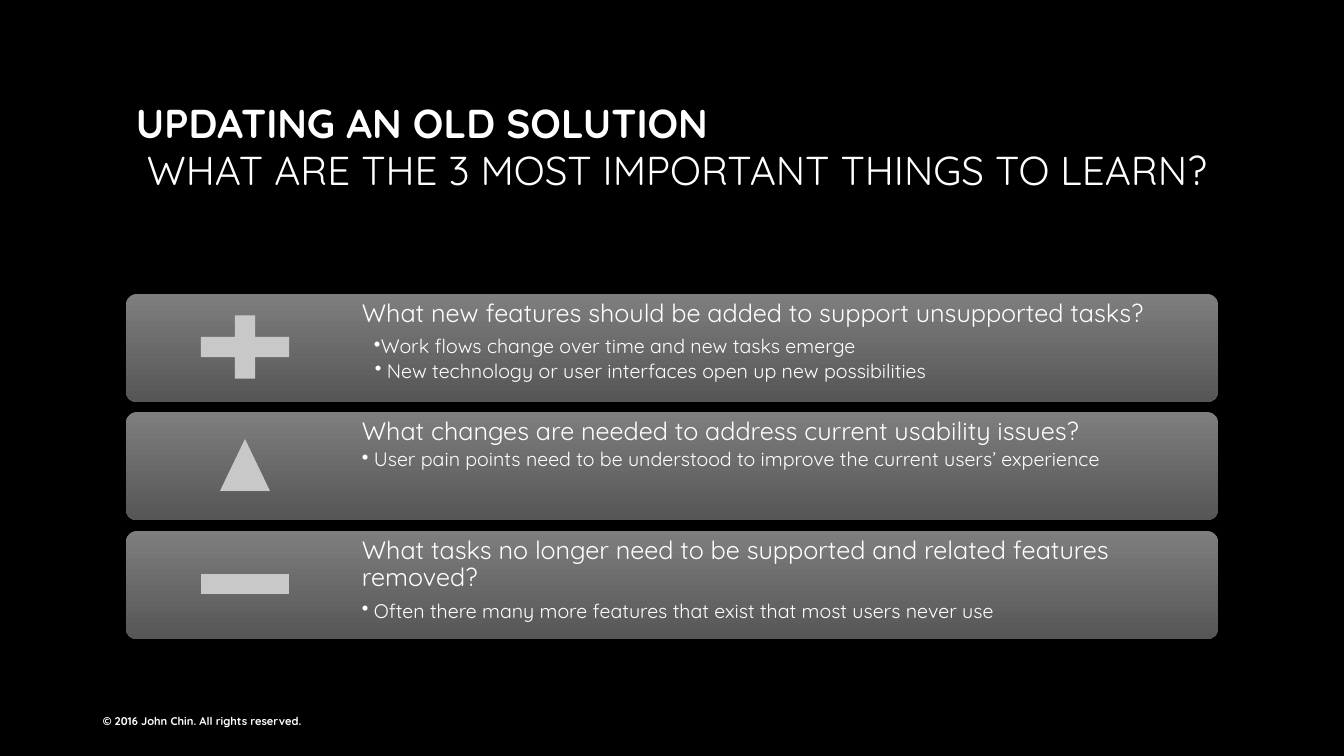
from lxml import etree
from pptx import Presentation
from pptx import util as u
from pptx.dml.color import RGBColor
from pptx.enum import shapes, text
from pptx.oxml.ns import qn

PX = 914400 / 100.8
FONT = "Quicksand"
BLACK = RGBColor(0x00, 0x00, 0x00)
WHITE = RGBColor(0xFF, 0xFF, 0xFF)
ROW_TOP = RGBColor(0x7E, 0x7E, 0x7E)
ROW_BOTTOM = RGBColor(0x56, 0x56, 0x56)
ICON = RGBColor(0xC8, 0xC8, 0xC8)

TITLE = ("UPDATING AN OLD SOLUTION\v"
         " WHAT ARE THE 3 MOST IMPORTANT THINGS TO LEARN?")
FOOTER = "© 2016 John Chin. All rights reserved."

# Icon shape, icon width and height, question, space after it (share of its size),
# bullets as (text, left margin, first-line indent)
ROWS = [
    (shapes.MSO_SHAPE.MATH_PLUS, 120, 86,
     "What new features should be added to support unsupported tasks?", 0.35,
     [("Work flows change over time and new tasks emerge", 12, 0),
      ("New technology or user interfaces open up new possibilities", 25, -12)]),
    (shapes.MSO_SHAPE.ISOSCELES_TRIANGLE, 50, 52,
     "What changes are needed to address current usability issues?", 0.15,
     [("User pain points need to be understood to improve the current "
       "users’ experience", 12, -12)]),
    (shapes.MSO_SHAPE.MATH_MINUS, 120, 86,
     "What tasks no longer need to be supported and related features removed?", 0.35,
     [("Often there many more features that exist that most users never use", 12, -12)]),
]


def px(n):
    return u.Emu(round(n * PX))


def style_runs(p, size, bold=False):
    for r in p.runs:
        r.font.name = FONT
        r.font.size = u.Pt(size)
        r.font.bold = bold
        r.font.color.rgb = WHITE


def add_text_box(s, x, y, w, h, anchor):
    tf = s.shapes.add_textbox(px(x), px(y), px(w), px(h)).text_frame
    tf.word_wrap = True
    tf.vertical_anchor = anchor
    return tf


def add_plain_shape(s, kind, x, y, w, h):
    sp = s.shapes.add_shape(kind, px(x), px(y), px(w), px(h))
    sp.shadow.inherit = False
    sp.line.fill.background()
    return sp


def set_bullet(p, margin, indent):
    pPr = p._p.get_or_add_pPr()
    pPr.set("marL", str(px(margin)))
    pPr.set("indent", str(px(indent)))
    etree.SubElement(pPr, qn("a:buChar")).set("char", "•")


def add_title(s, x, y, w, h):
    tf = add_text_box(s, x, y, w, h, text.MSO_ANCHOR.MIDDLE)
    tf.margin_bottom = px(53)
    tf.text = TITLE
    p = tf.paragraphs[0]
    p.line_spacing = 0.96
    style_runs(p, 28.8)
    p.runs[0].font.bold = True


def add_row(s, x, y, w, h, icon, icon_w, icon_h, question, gap, bullets):
    # Panel
    panel = add_plain_shape(s, shapes.MSO_SHAPE.ROUNDED_RECTANGLE, x, y, w, h)
    panel.adjustments[0] = 0.1
    panel.fill.gradient()
    panel.fill.gradient_angle = 270
    for stop, color in zip(panel.fill.gradient_stops, (ROW_TOP, ROW_BOTTOM)):
        stop.color.rgb = color

    # Icon, centred on one point of the panel
    sp = add_plain_shape(s, icon, x + 119 - icon_w // 2, y + 53 - icon_h // 2,
                         icon_w, icon_h)
    sp.fill.solid()
    sp.fill.fore_color.rgb = ICON

    # Question and bullets
    tf = add_text_box(s, x + 229, y, w - 229, h, text.MSO_ANCHOR.TOP)
    tf.margin_left = tf.margin_right = tf.margin_top = tf.margin_bottom = px(7)
    lines = [(question, 18, gap, None)]
    lines += [(words, 14, 0.15, (margin, indent)) for words, margin, indent in bullets]
    for i, (words, size, after, bullet) in enumerate(lines):
        p = tf.add_paragraph() if i else tf.paragraphs[0]
        p.text = words
        p.line_spacing = 0.9
        p.space_after = u.Pt(size * after)
        if bullet:
            set_bullet(p, *bullet)
        style_runs(p, size)


def add_rows(s, x, y, w, h):
    row_h = 108
    for i, row in enumerate(ROWS):
        top = y + i * (h - row_h) // (len(ROWS) - 1)
        add_row(s, x, top, w, row_h, *row)


def add_footer(s, x, y, w, h):
    tf = add_text_box(s, x, y, w, h, text.MSO_ANCHOR.MIDDLE)
    tf.text = FOOTER
    style_runs(tf.paragraphs[0], 8, bold=True)


def main():
    prs = Presentation()
    prs.slide_width, prs.slide_height = px(1344), px(756)
    s = prs.slides.add_slide(prs.slide_layouts[6])
    s.background.fill.solid()
    s.background.fill.fore_color.rgb = BLACK
    add_footer(s, 93, 701, 302, 40)
    add_title(s, 126, 67, 1092, 210)
    add_rows(s, 126, 294, 1092, 345)
    prs.save("out.pptx")


if __name__ == "__main__":
    main()
